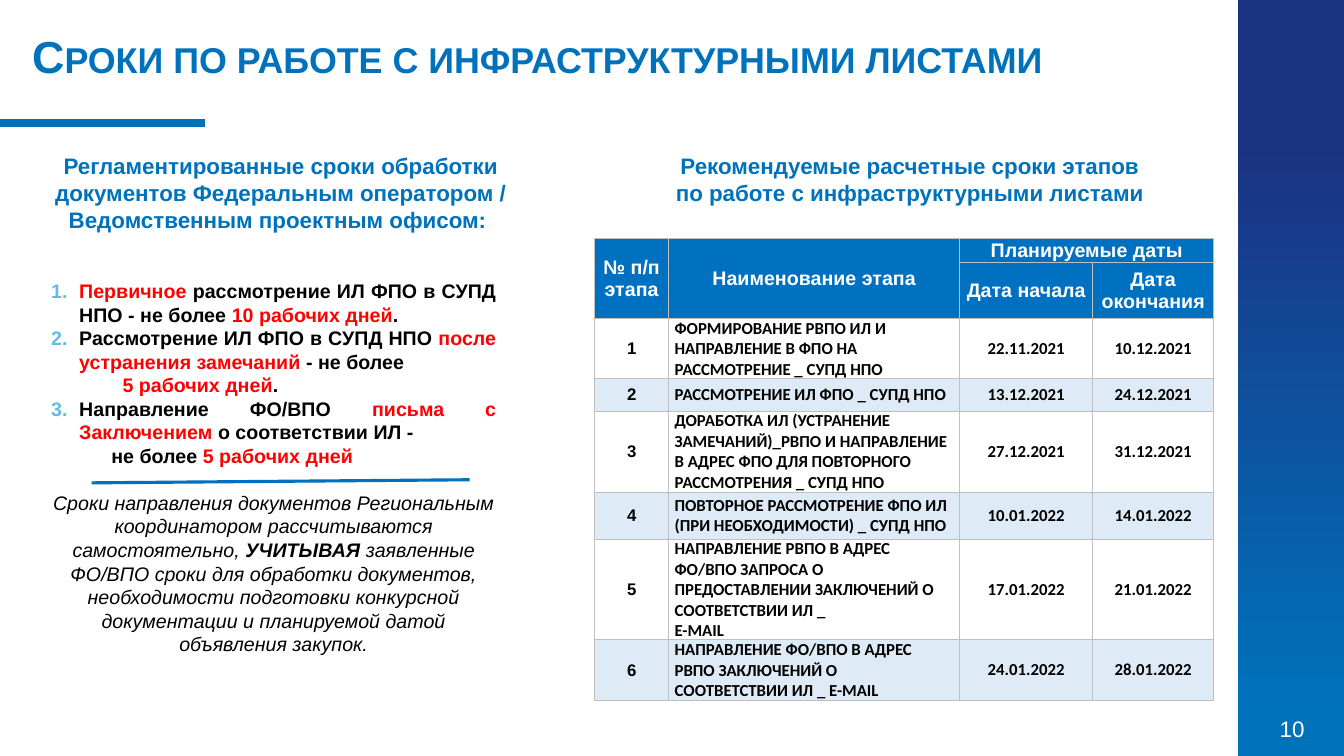
from typing import NamedTuple

import lxml.etree
import pptx
import pptx.dml.color
import pptx.enum.dml
import pptx.enum.shapes
import pptx.enum.text
import pptx.oxml.ns
import pptx.util

Pt = pptx.util.Pt
RGB = pptx.dml.color.RGBColor
ALIGN = pptx.enum.text.PP_ALIGN
ANCHOR = pptx.enum.text.MSO_ANCHOR
qn = pptx.oxml.ns.qn

BLUE = RGB(0x00, 0x72, 0xBC)
HEADER_BLUE = RGB(0x00, 0x70, 0xC0)
NAVY = RGB(0x1B, 0x32, 0x81)
BAND = RGB(0xDE, 0xEB, 0xF7)
NUMBER_BLUE = RGB(0x64, 0xBD, 0xE1)
GRID = RGB(0xBF, 0xBF, 0xBF)
RED = RGB(0xFF, 0x00, 0x00)
BLACK = RGB(0x00, 0x00, 0x00)
WHITE = RGB(0xFF, 0xFF, 0xFF)


class Box(NamedTuple):
    left: float
    top: float
    width: float
    height: float


class Rule(NamedTuple):
    start: tuple[float, float]
    end: tuple[float, float]
    color: RGB
    width: float


class Heading(NamedTuple):
    box: Box
    lines: list[str]


class Term(NamedTuple):
    """One paragraph of the deadlines; number 0 marks an indented continuation."""
    number: int
    indent: float
    phrases: list[tuple[str, RGB]]


class Stage(NamedTuple):
    name: str
    start: str
    end: str


RULES = [
    Rule((0, 87.84), (146.16, 87.84), BLUE, 6),
    Rule((65.5, 344.9), (335.5, 342.7), HEADER_BLUE, 2.25),
]
HEADINGS = [
    Heading(Box(29.5, 105.1, 342, 65.5),
            ["Регламентированные сроки обработки документов Федеральным оператором / "
             "Ведомственным проектным офисом: "]),
    Heading(Box(412.6, 105.1, 474.5, 46),
            ["Рекомендуемые расчетные сроки этапов", "по работе с инфраструктурными листами"]),
]
TERMS = [
    Term(1, 20, [("Первичное", RED), (" рассмотрение ИЛ ФПО в СУПД НПО - не более ", BLACK),
                 ("10 рабочих дней", RED), (".", BLACK)]),
    Term(2, 20, [("Рассмотрение ИЛ ФПО в СУПД НПО ", BLACK),
                 ("после устранения замечаний", RED), (" - не более", BLACK)]),
    Term(0, 51, [("5 рабочих дней", RED), (".", BLACK)]),
    Term(3, 20, [("Направление ФО/ВПО ", BLACK), ("письма с Заключением ", RED),
                 ("о соответствии ИЛ -", BLACK)]),
    Term(0, 43, [("не более ", BLACK), ("5 рабочих дней", RED)]),
]
NOTE = [
    ("Сроки направления документов Региональным координатором рассчитываются самостоятельно, ", False),
    ("УЧИТЫВАЯ ", True),
    ("заявленные ФО/ВПО сроки для обработки документов, необходимости подготовки конкурсной "
     "документации и планируемой датой объявления закупок.", False),
]
STAGES = [
    Stage("ФОРМИРОВАНИЕ РВПО ИЛ И НАПРАВЛЕНИЕ В ФПО НА РАССМОТРЕНИЕ _ СУПД НПО",
          "22.11.2021", "10.12.2021"),
    Stage("РАССМОТРЕНИЕ ИЛ ФПО _ СУПД НПО", "13.12.2021", "24.12.2021"),
    Stage("ДОРАБОТКА ИЛ (УСТРАНЕНИЕ ЗАМЕЧАНИЙ)_РВПО И НАПРАВЛЕНИЕ В АДРЕС ФПО ДЛЯ ПОВТОРНОГО "
          "РАССМОТРЕНИЯ _ СУПД НПО", "27.12.2021", "31.12.2021"),
    Stage("ПОВТОРНОЕ РАССМОТРЕНИЕ ФПО ИЛ (ПРИ НЕОБХОДИМОСТИ) _ СУПД НПО",
          "10.01.2022", "14.01.2022"),
    Stage("НАПРАВЛЕНИЕ РВПО В АДРЕС ФО/ВПО ЗАПРОСА О ПРЕДОСТАВЛЕНИИ ЗАКЛЮЧЕНИЙ О "
          "СООТВЕТСТВИИ ИЛ _\nE-MAIL", "17.01.2022", "21.01.2022"),
    Stage("НАПРАВЛЕНИЕ ФО/ВПО В АДРЕС РВПО ЗАКЛЮЧЕНИЙ О СООТВЕТСТВИИ ИЛ _ E-MAIL",
          "24.01.2022", "28.01.2022"),
]
COLUMN_WIDTHS = [52.8, 208, 95, 86.4]
ROW_HEIGHTS = [17, 40, 43, 23, 58, 33.5, 72, 43.5]


def write(paragraph, text: str, *, size: float, color: RGB, font: str = "Arial",
          bold: bool = False, italic: bool = False, small_caps: bool = False) -> None:
    run = paragraph.add_run()
    run.text = text
    run.font.name, run.font.size = font, Pt(size)
    run.font.bold, run.font.italic = bold, italic
    run.font.color.rgb = color
    if small_caps:
        run.font._element.set("cap", "small")


def next_paragraph(frame, align: ALIGN):
    """Return the empty first paragraph, or a new one once it is in use."""
    first = frame.paragraphs[0]
    paragraph = frame.add_paragraph() if first.runs else first
    paragraph.alignment = align
    return paragraph


def add_text_box(slide, box: Box):
    frame = slide.shapes.add_textbox(*map(Pt, box)).text_frame
    frame.word_wrap = True
    return frame


def add_rectangle(slide, box: Box):
    rectangle = slide.shapes.add_shape(pptx.enum.shapes.MSO_SHAPE.RECTANGLE, *map(Pt, box))
    rectangle.shadow.inherit = False
    rectangle.line.fill.background()
    return rectangle


def add_rule(slide, rule: Rule) -> None:
    line = slide.shapes.add_connector(pptx.enum.shapes.MSO_CONNECTOR.STRAIGHT,
                                      *map(Pt, rule.start + rule.end))
    line.line.color.rgb, line.line.width = rule.color, Pt(rule.width)
    lxml.etree.SubElement(line._element.spPr, qn("a:effectLst"))


def add_side_band(slide) -> None:
    band = add_rectangle(slide, Box(884.2, 0, 75.8, 540))
    band.fill.gradient()
    band.fill.gradient_angle = 270
    for stop, color, position in zip(band.fill.gradient_stops, (NAVY, BLUE), (0.18, 0.94)):
        stop.color.rgb, stop.position = color, position
    page = add_text_box(slide, Box(894.2, 505.4, 57.6, 29.5))
    page.vertical_anchor = ANCHOR.MIDDLE
    write(next_paragraph(page, ALIGN.CENTER), "10", size=16, color=WHITE)


def set_numbering(paragraph, number: int, indent: float) -> None:
    properties = paragraph._p.get_or_add_pPr()
    properties.set("marL", str(Pt(indent)))
    properties.set("indent", str(Pt(-indent if number else 0)))
    if number:
        color = lxml.etree.SubElement(properties, qn("a:buClr"))
        lxml.etree.SubElement(color, qn("a:srgbClr"), val=str(NUMBER_BLUE))
        lxml.etree.SubElement(properties, qn("a:buFont"), typeface="Arial")
        lxml.etree.SubElement(properties, qn("a:buAutoNum"), type="arabicPeriod",
                              startAt=str(number))
    else:
        lxml.etree.SubElement(properties, qn("a:buNone"))


def add_terms(slide) -> None:
    panel = add_rectangle(slide, Box(29.5, 195.8, 332, 278.6))
    panel.fill.solid()
    panel.fill.fore_color.rgb = WHITE
    frame = panel.text_frame
    frame.word_wrap, frame.vertical_anchor = True, ANCHOR.TOP
    for term in TERMS:
        paragraph = next_paragraph(frame, ALIGN.JUSTIFY)
        set_numbering(paragraph, term.number, term.indent)
        for text, color in term.phrases:
            write(paragraph, text, size=14, color=color, bold=True)
    note = next_paragraph(frame, ALIGN.CENTER)
    note.space_before = Pt(16.8)
    for text, bold in NOTE:
        write(note, text, size=14, color=BLACK, bold=bold, italic=True)


def fill_cell(cell, text: str, *, fill: RGB | None, align: ALIGN = ALIGN.CENTER,
              side: float = 4.3, **text_format) -> None:
    cell.margin_left = cell.margin_right = Pt(side)
    cell.margin_top = cell.margin_bottom = 0
    cell.vertical_anchor = ANCHOR.MIDDLE
    for line in text.split("\n") if text else []:
        write(next_paragraph(cell.text_frame, align), line, bold=True, **text_format)
    properties = cell._tc.get_or_add_tcPr()
    for edge in ("a:lnL", "a:lnR", "a:lnT", "a:lnB"):
        border = lxml.etree.SubElement(properties, qn(edge), w=str(Pt(0.5)))
        solid = lxml.etree.SubElement(border, qn("a:solidFill"))
        lxml.etree.SubElement(solid, qn("a:srgbClr"), val=str(GRID))
    if fill is None:
        cell.fill.background()
    else:
        cell.fill.solid()
        cell.fill.fore_color.rgb = fill


def add_schedule(slide) -> None:
    box = Box(424.8, 170.3, sum(COLUMN_WIDTHS), sum(ROW_HEIGHTS))
    table = slide.shapes.add_table(len(ROW_HEIGHTS), len(COLUMN_WIDTHS), *map(Pt, box)).table
    table.first_row = table.horz_banding = False
    for column, width in zip(table.columns, COLUMN_WIDTHS):
        column.width = Pt(width)
    for row, height in zip(table.rows, ROW_HEIGHTS):
        row.height = Pt(height)
    headers = [["№ п/п\nэтапа", "Наименование этапа", "Планируемые даты", ""],
               ["", "", "Дата начала", "Дата окончания"]]
    for row, labels in enumerate(headers):
        for column, label in enumerate(labels):
            fill_cell(table.cell(row, column), label, fill=HEADER_BLUE, size=14, color=WHITE)
    for first, last in (((0, 0), (1, 0)), ((0, 1), (1, 1)), ((0, 2), (0, 3))):
        table.cell(*first).merge(table.cell(*last))
    for number, stage in enumerate(STAGES, start=1):
        look = dict(fill=None if number % 2 else BAND, size=12, color=BLACK)
        cells = [table.cell(number + 1, column) for column in range(4)]
        fill_cell(cells[0], str(number), **look)
        fill_cell(cells[1], stage.name, align=ALIGN.LEFT, font="Calibri", **look)
        for cell, date in zip(cells[2:], (stage.start, stage.end)):
            fill_cell(cell, date, side=0.7, font="Calibri", **look)


def main() -> None:
    deck = pptx.Presentation()
    deck.slide_width, deck.slide_height = Pt(960), Pt(540)
    slide = deck.slides.add_slide(deck.slide_layouts[5])
    title = slide.shapes.title
    title.left, title.top, title.width, title.height = map(Pt, (15.8, 16.6, 793.4, 46))
    title.text_frame.vertical_anchor = ANCHOR.TOP
    write(next_paragraph(title.text_frame, ALIGN.JUSTIFY),
          "Сроки по работе с инфраструктурными листами",
          size=32, color=BLUE, bold=True, small_caps=True)
    add_side_band(slide)
    add_schedule(slide)
    for heading in HEADINGS:
        frame = add_text_box(slide, heading.box)
        for line in heading.lines:
            write(next_paragraph(frame, ALIGN.CENTER), line, size=16, color=BLUE, bold=True)
    add_terms(slide)
    for rule in RULES:
        add_rule(slide, rule)
    deck.save("out.pptx")


if __name__ == "__main__":
    main()
